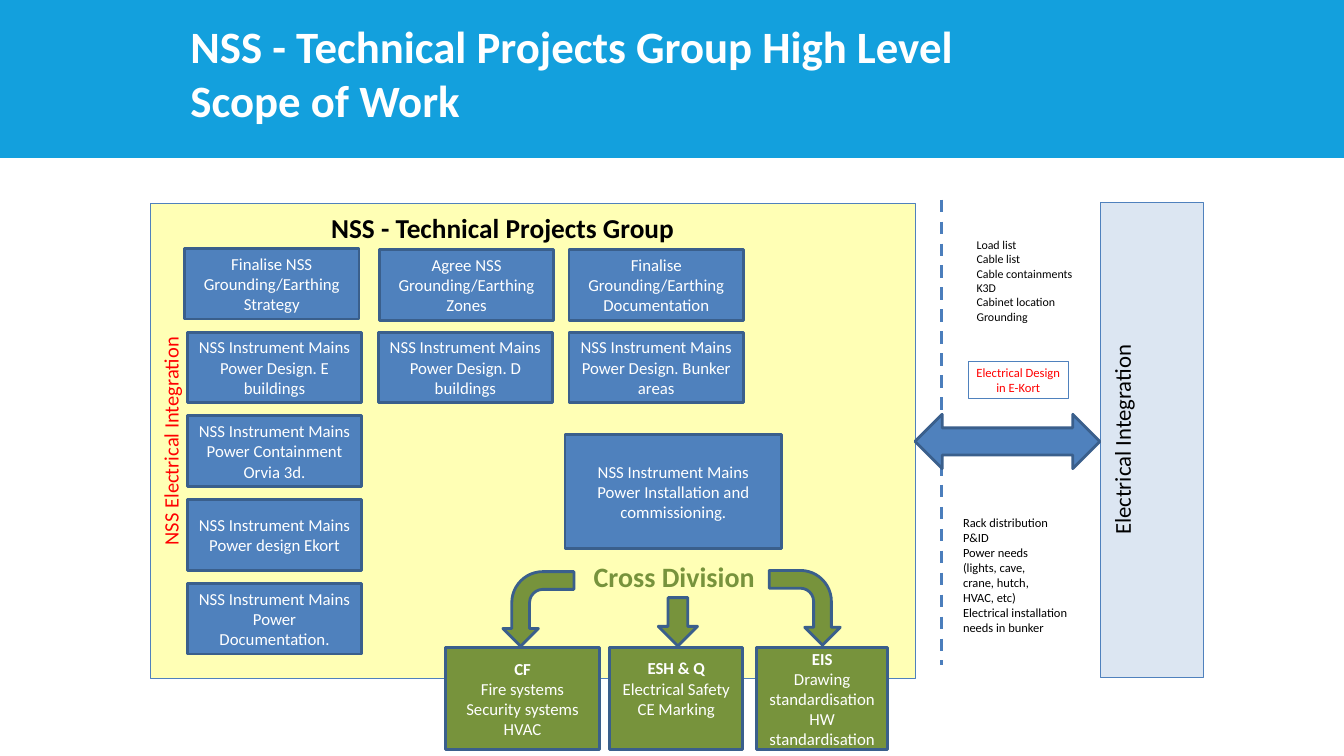
from lxml.etree import SubElement
from pptx import Presentation
from pptx.dml.color import RGBColor
from pptx.enum.dml import MSO_LINE
from pptx.enum.shapes import MSO_CONNECTOR, MSO_SHAPE
from pptx.enum.text import MSO_ANCHOR, PP_ALIGN
from pptx.oxml.ns import qn
from pptx.util import Cm, Pt

HUES = {
    "banner": "13A0DD", "white": "FFFFFF", "black": "000000", "red": "FF0000",
    "blue": "4F81BD", "edge": "3A5F8C", "dash": "4B7EBC", "pale": "DCE6F2",
    "yellow": "FFFF00", "green": "77933C",
}
TIGHT = (0.2, 0.1)

deck = Presentation()
deck.slide_width, deck.slide_height = Cm(33.87), Cm(19.05)
slide = deck.slides.add_slide(deck.slide_layouts[6])


def draw(kind, at, fill=None, edge="edge", width=2):
    shape = slide.shapes.add_shape(kind, *map(Cm, at))
    shape.shadow.inherit = False
    for part, hue in ((shape.fill, fill), (shape.line.fill, edge)):
        if hue:
            part.solid()
            part.fore_color.rgb = RGBColor.from_string(HUES[hue])
        else:
            part.background()
    if edge:
        shape.line.width = Pt(width)
    return shape


def write(text, shape=None, at=None, size=12, hue="white", bold=False, head=False,
          align=PP_ALIGN.CENTER, anchor=MSO_ANCHOR.MIDDLE, wrap=True,
          pad=(0.25, 0.13), turn=False):
    shape = shape or slide.shapes.add_textbox(*map(Cm, at))
    frame = shape.text_frame
    frame.word_wrap = wrap
    frame.vertical_anchor = anchor
    frame.margin_left = frame.margin_right = Cm(pad[0])
    frame.margin_top = frame.margin_bottom = Cm(pad[1])
    if turn:
        frame._txBody.find(qn("a:bodyPr")).set("vert", "vert270")
    for i, line in enumerate(text.split("\n")):
        para = frame.paragraphs[0] if i == 0 else frame.add_paragraph()
        para.alignment = align
        run = para.add_run()
        run.text = line
        run.font.name = "Calibri"
        run.font.size = Pt(size)
        run.font.bold = bold or (head and i == 0)
        run.font.color.rgb = RGBColor.from_string(HUES[hue])
    return frame


# Title banner
draw(MSO_SHAPE.RECTANGLE, (0, 0, 33.87, 3.98), "banner", None)
write("NSS - Technical Projects Group High Level Scope of Work",
      at=(4.55, 0.49, 21.49, 2.82), size=32, bold=True,
      align=PP_ALIGN.LEFT, anchor=MSO_ANCHOR.BOTTOM)

# Integration panel and dashed border line
panel = draw(MSO_SHAPE.RECTANGLE, (27.73, 5.1, 2.6, 11.97), "pale", "blue", 0.75)
write("Electrical Integration", panel, size=16.2, hue="black",
      anchor=MSO_ANCHOR.TOP, wrap=False, pad=TIGHT, turn=True)
border = slide.shapes.add_connector(
    MSO_CONNECTOR.STRAIGHT, Cm(23.72), Cm(5.03), Cm(23.72), Cm(16.76))
border.line.color.rgb = RGBColor.from_string(HUES["dash"])
border.line.width = Pt(2.25)
border.line.dash_style = MSO_LINE.DASH
SubElement(border._element.spPr, qn("a:effectLst"))

# Group panel, see-through yellow
group = draw(MSO_SHAPE.RECTANGLE, (3.79, 5.13, 19.28, 11.98), "yellow", "blue", 0.75)
tint = group._element.spPr.find(qn("a:solidFill"))[0]
SubElement(tint, qn("a:alpha")).set("val", "29000")
write("NSS Electrical Integration", group, size=14.6, hue="red",
      anchor=MSO_ANCHOR.TOP, wrap=False, pad=TIGHT, turn=True)
write("NSS - Technical Projects Group", at=(7.67, 5.23, 10, 0.95), size=19.5,
      hue="black", bold=True, anchor=MSO_ANCHOR.TOP, pad=TIGHT)

# Notes beside the dashed line
notes = [
    ("Load list\nCable list\nCable containments\nK3D\nCabinet location\nGrounding",
     (24.41, 5.89, 3.1, 2.72), 8.5),
    ("Rack distribution\nP&ID\nPower needs\n(lights, cave,\ncrane, hutch,\n"
     "HVAC, etc)\nElectrical installation\nneeds in bunker",
     (24.07, 12.88, 3.4, 4.24), 8.9),
]
for text, at, size in notes:
    write(text, at=at, size=size, hue="black", align=PP_ALIGN.LEFT,
          anchor=MSO_ANCHOR.TOP, pad=TIGHT)
label = draw(MSO_SHAPE.RECTANGLE, (24.4, 9.1, 2.52, 0.94), None, "blue", 0.75)
write("Electrical Design\nin E-Kort", label, size=9, hue="red",
      anchor=MSO_ANCHOR.TOP, wrap=False, pad=TIGHT)
draw(MSO_SHAPE.LEFT_RIGHT_ARROW, (23.06, 10.44, 4.66, 1.37), "blue")

# Task boxes: column, row, text, small shift across and down
tasks = [
    (0, 0, "Finalise NSS Grounding/Earthing Strategy", -0.07, 0),
    (1, 0, "Agree NSS Grounding/Earthing Zones", 0.03, 0.03),
    (2, 0, "Finalise Grounding/Earthing Documentation", 0, 0.03),
    (0, 1, "NSS Instrument Mains Power Design. E buildings", 0, 0),
    (1, 1, "NSS Instrument Mains Power Design. D buildings", 0, 0),
    (2, 1, "NSS Instrument Mains Power Design. Bunker areas", 0, 0),
    (0, 2, "NSS Instrument Mains Power Containment Orvia 3d.", 0, 0),
    (0, 3, "NSS Instrument Mains Power design Ekort", 0, 0),
    (0, 4, "NSS Instrument Mains Power Documentation.", 0, 0),
]
for col, row, text, right, down in tasks:
    at = (4.72 + 4.81 * col + right, 6.26 + 2.11 * row + down, 4.4, 1.78)
    write(text, draw(MSO_SHAPE.RECTANGLE, at, "blue"))
final = draw(MSO_SHAPE.RECTANGLE, (14.24, 10.96, 5.46, 2.87), "blue")
write("NSS Instrument Mains Power Installation and commissioning.", final)

# Cross division boxes: left, width, text, extra room below
units = [
    (11.23, 3.88, "CF\nFire systems\nSecurity systems\nHVAC", 0),
    (15.37, 3.35, "ESH & Q\nElectrical Safety\nCE Marking", 0.52),
    (19.07, 3.3, "EIS\nDrawing standardisation\nHW standardisation", 0),
]
for left, width, text, room in units:
    unit = draw(MSO_SHAPE.RECTANGLE, (left, 16.32, width, 2.57), "green")
    frame = write(text, unit, head=True)
    frame.margin_bottom += Cm(room)

# Cross division heading and arrows
write("Cross Division", at=(14.71, 13.96, 4.6, 1.12), size=20, hue="green",
      bold=True, align=PP_ALIGN.LEFT, anchor=MSO_ANCHOR.TOP, wrap=False)
for left, top, flip in ((19.34, 14.42, False), (12.63, 14.45, True)):
    bend = draw(MSO_SHAPE.BENT_ARROW, (left, top, 1.88, 1.79), "green")
    bend.rotation = 90
    if flip:
        bend._element.spPr.find(qn("a:xfrm")).set("flipV", "1")
draw(MSO_SHAPE.DOWN_ARROW, (16.59, 15.06, 0.99, 1.22), "green")

deck.save("out.pptx")
